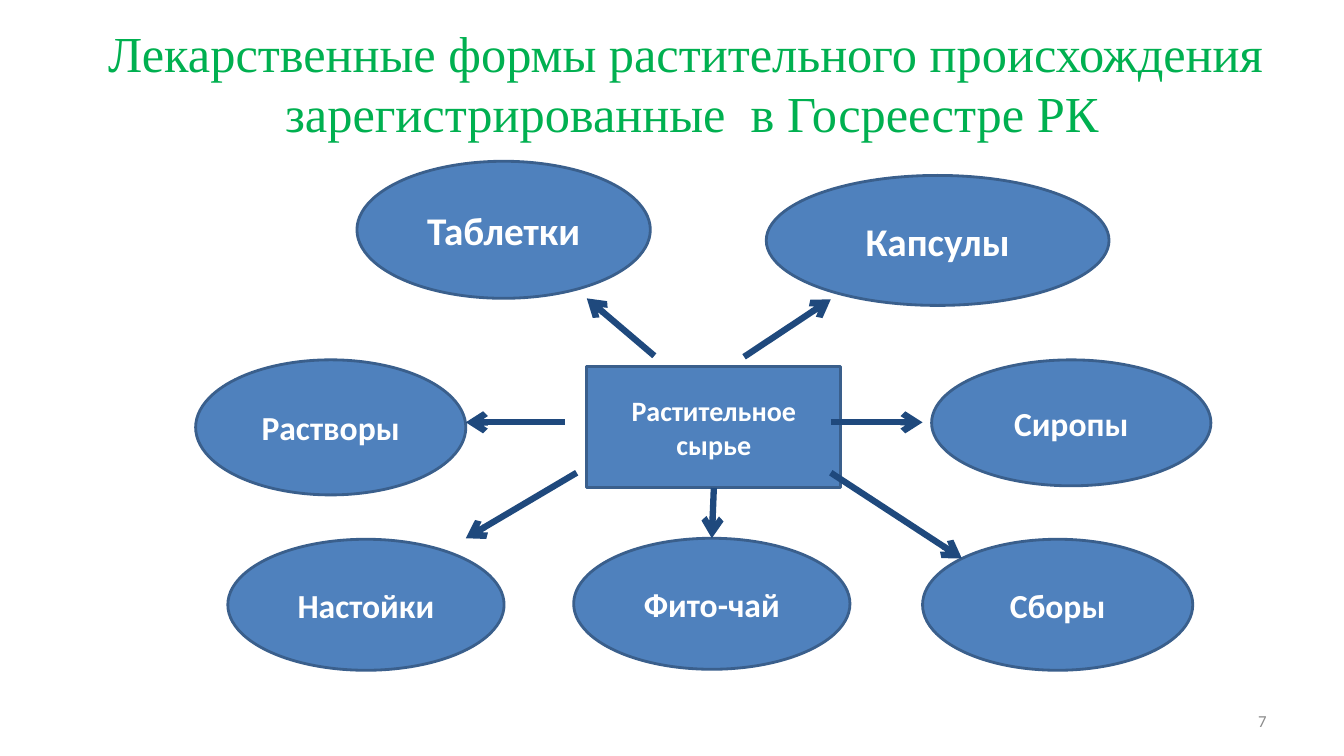
from lxml.etree import SubElement
from pptx import Presentation
from pptx.dml.color import RGBColor
from pptx.enum.shapes import MSO_CONNECTOR, MSO_SHAPE
from pptx.enum.text import MSO_ANCHOR, PP_ALIGN
from pptx.oxml.ns import qn
from pptx.util import Inches, Pt

# Content: text, box (left, top, width, height) in inches, text size
TITLE = "Лекарственные формы растительного происхождения  зарегистрированные  в Госреестре РК"
TITLE_BOX = (0.84, -0.11, 12.05, 1.85)
PAGE_NUMBER = "7"
PAGE_BOX = (9.55, 6.95, 3.11, 0.4)
SOURCE = ("Растительное сырье", (5.82, 3.64, 2.52, 1.2), 20)
TEA = "Фито-чай"
FORMS = [
    ("Растворы", (1.94, 3.57, 2.68, 1.34), 24),
    ("Настойки", (2.26, 5.35, 2.74, 1.3), 24),
    ("Капсулы", (7.6, 1.74, 3.4, 1.29), 28),
    ("Таблетки", (3.54, 1.6, 2.91, 1.36), 28),
    ("Сиропы", (9.24, 3.57, 2.77, 1.25), 24),
    ("Сборы", (9.15, 5.35, 2.68, 1.3), 24),
    (TEA, (5.69, 5.34, 2.74, 1.3), 24),
]
# Arrows from the raw material to each form: start x, y, end x, y
ARROWS = {
    "Настойки": (5.72, 4.69, 4.62, 5.34),
    TEA: (7.06, 4.82, 7.06, 5.34),
    "Сборы": (8.24, 4.69, 9.54, 5.54),
    "Сиропы": (8.24, 4.19, 9.15, 4.19),
    "Капсулы": (7.38, 3.54, 8.24, 2.97),
    "Таблетки": (6.49, 3.53, 5.82, 2.96),
    "Растворы": (5.6, 4.19, 4.62, 4.19),
}
COLORS = {"title": "00B050", "page": "8C8C8C", "fill": "4F81BD",
          "outline": "3A5F8C", "arrow": "1F497D", "label": "FFFFFF"}


def color(name):
    return RGBColor.from_string(COLORS[name])


def inches(values):
    return [Inches(value) for value in values]


def write(holder, text, align, ink, **font_format):
    frame = holder.text_frame
    frame.word_wrap = True
    frame.vertical_anchor = MSO_ANCHOR.MIDDLE
    paragraph = frame.paragraphs[0]
    paragraph.alignment = align
    run = paragraph.add_run()
    run.text = text
    run.font.color.rgb = color(ink)
    for key, value in font_format.items():
        setattr(run.font, key, value)


def add_node(slide, preset, text, box, size):
    node = slide.shapes.add_shape(preset, *inches(box))
    node.shadow.inherit = False
    node.fill.solid()
    node.fill.fore_color.rgb = color("fill")
    node.line.color.rgb = color("outline")
    node.line.width = Pt(2)
    write(node, text, PP_ALIGN.CENTER, "label", name="Calibri", size=Pt(size), bold=True)
    return node


def add_arrow(slide, ends):
    arrow = slide.shapes.add_connector(MSO_CONNECTOR.STRAIGHT, *inches(ends))
    arrow.line.color.rgb = color("arrow")
    arrow.line.width = Pt(4.5)
    SubElement(arrow.line._get_or_add_ln(), qn("a:tailEnd"), type="arrow")
    SubElement(arrow._element.spPr, qn("a:effectLst"))
    return arrow


def main():
    deck = Presentation()
    deck.slide_width, deck.slide_height = inches((13.33, 7.5))
    slide = deck.slides.add_slide(deck.slide_layouts[5])

    # Title and page number
    title = slide.shapes.title
    title.left, title.top, title.width, title.height = inches(TITLE_BOX)
    write(title, TITLE, PP_ALIGN.CENTER, "title", name="Times New Roman", size=Pt(36))
    page = slide.shapes.add_textbox(*inches(PAGE_BOX))
    write(page, PAGE_NUMBER, PP_ALIGN.RIGHT, "page", name="Calibri", size=Pt(12))

    # Raw material and the dosage forms around it
    source = add_node(slide, MSO_SHAPE.RECTANGLE, *SOURCE)
    forms = {form[0]: add_node(slide, MSO_SHAPE.OVAL, *form) for form in FORMS}

    # Arrows; the one to the tea joins the middles of both sides
    arrows = {name: add_arrow(slide, ends) for name, ends in ARROWS.items()}
    arrows[TEA].begin_connect(source, 2)
    arrows[TEA].end_connect(forms[TEA], 0)

    deck.save("out.pptx")


if __name__ == "__main__":
    main()
